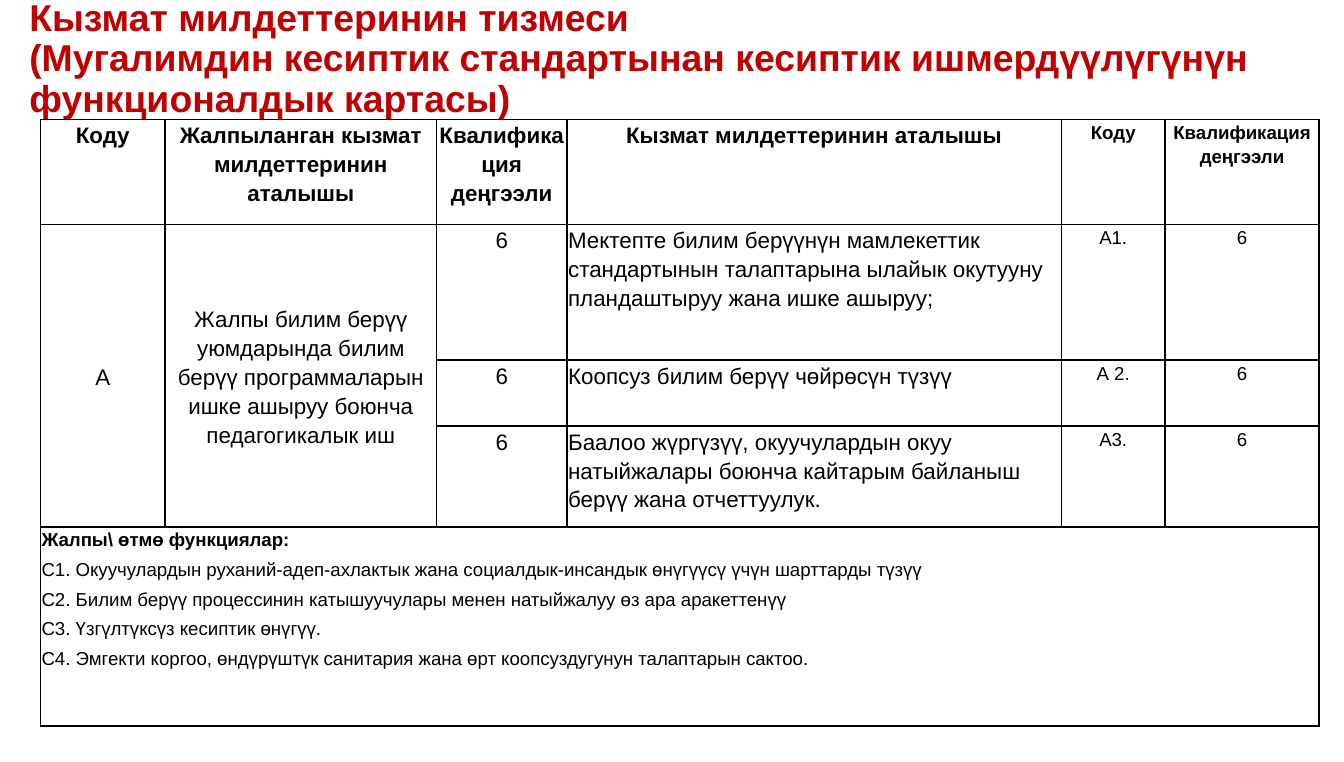
from dataclasses import dataclass
from typing import Any

import lxml.etree
import pptx
import pptx.dml.color
import pptx.enum.text
import pptx.oxml.ns
import pptx.util

Pt = pptx.util.Pt
CENTER = pptx.enum.text.PP_ALIGN.CENTER
LEFT = pptx.enum.text.PP_ALIGN.LEFT
TOP = pptx.enum.text.MSO_ANCHOR.TOP
MIDDLE = pptx.enum.text.MSO_ANCHOR.MIDDLE

COLUMN_WIDTHS = [66.9, 145.4, 69.8, 265, 55.4, 82.6]
ROW_HEIGHTS = [56.2, 72.6, 35.4, 54, 106.6]


@dataclass
class TableCell:
    row: int
    column: int
    lines: list[str]
    size: float = 12
    bold_lines: int = 0
    alignment: Any = CENTER
    anchor: Any = TOP
    row_span: int = 1
    column_span: int = 1


def color(value: str) -> pptx.dml.color.RGBColor:
    return pptx.dml.color.RGBColor.from_string(value)


def apply_format(target: Any, values: dict[str, Any]) -> None:
    for name, value in values.items():
        setattr(target, name, value)


def write_paragraph(paragraph: Any, text: str, size: float, bold: bool,
                    font_color: str, layout: dict[str, Any]) -> None:
    paragraph.text = text
    apply_format(paragraph, layout)
    apply_format(paragraph.font, {"name": "Arial", "size": Pt(size), "bold": bold})
    paragraph.font.color.rgb = color(font_color)


def draw_borders(cell: Any, line_color: str, width: float) -> None:
    properties = cell._tc.get_or_add_tcPr()
    qualified = pptx.oxml.ns.qn
    for side in ("a:lnL", "a:lnR", "a:lnT", "a:lnB"):
        line = lxml.etree.SubElement(properties, qualified(side), w=str(Pt(width)))
        fill = lxml.etree.SubElement(line, qualified("a:solidFill"))
        lxml.etree.SubElement(fill, qualified("a:srgbClr"), val=line_color)


def fill_cell(table: Any, content: TableCell) -> None:
    cell = table.cell(content.row, content.column)
    if content.row_span > 1 or content.column_span > 1:
        cell.merge(table.cell(content.row + content.row_span - 1,
                              content.column + content.column_span - 1))
    cell.vertical_anchor = content.anchor
    layout = {"alignment": content.alignment, "line_spacing": 1.15, "space_after": Pt(3)}
    frame = cell.text_frame
    for index, text in enumerate(content.lines):
        paragraph = frame.add_paragraph() if index else frame.paragraphs[0]
        write_paragraph(paragraph, text, content.size, index < content.bold_lines,
                        "000000", layout)


def draw_title(slide: Any, text: str) -> None:
    shape = slide.shapes.add_textbox(Pt(8.6), Pt(0), Pt(711.4), Pt(64))
    apply_format(shape.text_frame, {"word_wrap": True, "vertical_anchor": MIDDLE})
    write_paragraph(shape.text_frame.paragraphs[0], text, 20, True, "C00000",
                    {"line_spacing": 0.9})


def draw_table(slide: Any, contents: list[TableCell]) -> None:
    shape = slide.shapes.add_table(
        len(ROW_HEIGHTS), len(COLUMN_WIDTHS), Pt(21.6), Pt(64),
        Pt(sum(COLUMN_WIDTHS)), Pt(sum(ROW_HEIGHTS)))
    table = shape.table
    apply_format(table, {"first_row": False, "horz_banding": False})
    for column, width in zip(table.columns, COLUMN_WIDTHS):
        column.width = Pt(width)
    for row, height in zip(table.rows, ROW_HEIGHTS):
        row.height = Pt(height)
    for cell in table.iter_cells():
        apply_format(cell, {"margin_left": Pt(0.7), "margin_right": Pt(0.7),
                            "margin_top": 0, "margin_bottom": 0})
        draw_borders(cell, "000000", 1)
        cell.fill.solid()
        cell.fill.fore_color.rgb = color("FFFFFF")
    for content in contents:
        fill_cell(table, content)


def table_contents() -> list[TableCell]:
    headings = ["Коду", "Жалпыланган кызмат милдеттеринин аталышы",
                "Квалификация деңгээли", "Кызмат милдеттеринин аталышы",
                "Коду", "Квалификация деңгээли"]
    duties = [
        ("Мектепте билим берүүнүн мамлекеттик стандартынын талаптарына ылайык "
         "окутууну пландаштыруу жана ишке ашыруу;", "А1."),
        ("Коопсуз билим берүү чөйрөсүн түзүү", "А 2."),
        ("Баалоо жүргүзүү, окуучулардын окуу натыйжалары боюнча кайтарым "
         "байланыш берүү жана отчеттуулук.", "А3."),
    ]
    general_functions = [
        "Жалпы\\ өтмө функциялар:",
        "С1. Окуучулардын руханий-адеп-ахлактык жана социалдык-инсандык өнүгүүсү "
        "үчүн шарттарды түзүү",
        "С2. Билим берүү процессинин катышуучулары менен натыйжалуу өз ара аракеттенүү",
        "С3. Үзгүлтүксүз кесиптик өнүгүү.",
        "С4. Эмгекти коргоо, өндүрүштүк санитария жана өрт коопсуздугунун "
        "талаптарын сактоо.",
    ]
    general_duty = ("Жалпы билим берүү уюмдарында билим берүү программаларын ишке "
                    "ашыруу боюнча педагогикалык иш")
    contents = [TableCell(0, column, [text], 12 if column < 4 else 10, bold_lines=1)
                for column, text in enumerate(headings)]
    contents += [TableCell(1, column, [text], anchor=MIDDLE, row_span=3)
                 for column, text in enumerate(["А", general_duty])]
    for row, (duty, code) in enumerate(duties, start=1):
        contents += [TableCell(row, 2, ["6"]),
                     TableCell(row, 3, [duty], alignment=LEFT),
                     TableCell(row, 4, [code], 10),
                     TableCell(row, 5, ["6"], 10)]
    contents.append(TableCell(4, 0, general_functions, 10, bold_lines=1,
                              alignment=LEFT, column_span=6))
    return contents


def main() -> None:
    presentation = pptx.Presentation()
    apply_format(presentation, {"slide_width": Pt(720), "slide_height": Pt(408)})
    slide = presentation.slides.add_slide(presentation.slide_layouts[6])
    draw_title(slide, "Кызмат милдеттеринин тизмеси\v(Мугалимдин кесиптик стандартынан "
                      "кесиптик ишмердүүлүгүнүн функционалдык картасы)")
    draw_table(slide, table_contents())
    presentation.save("out.pptx")


if __name__ == "__main__":
    main()
